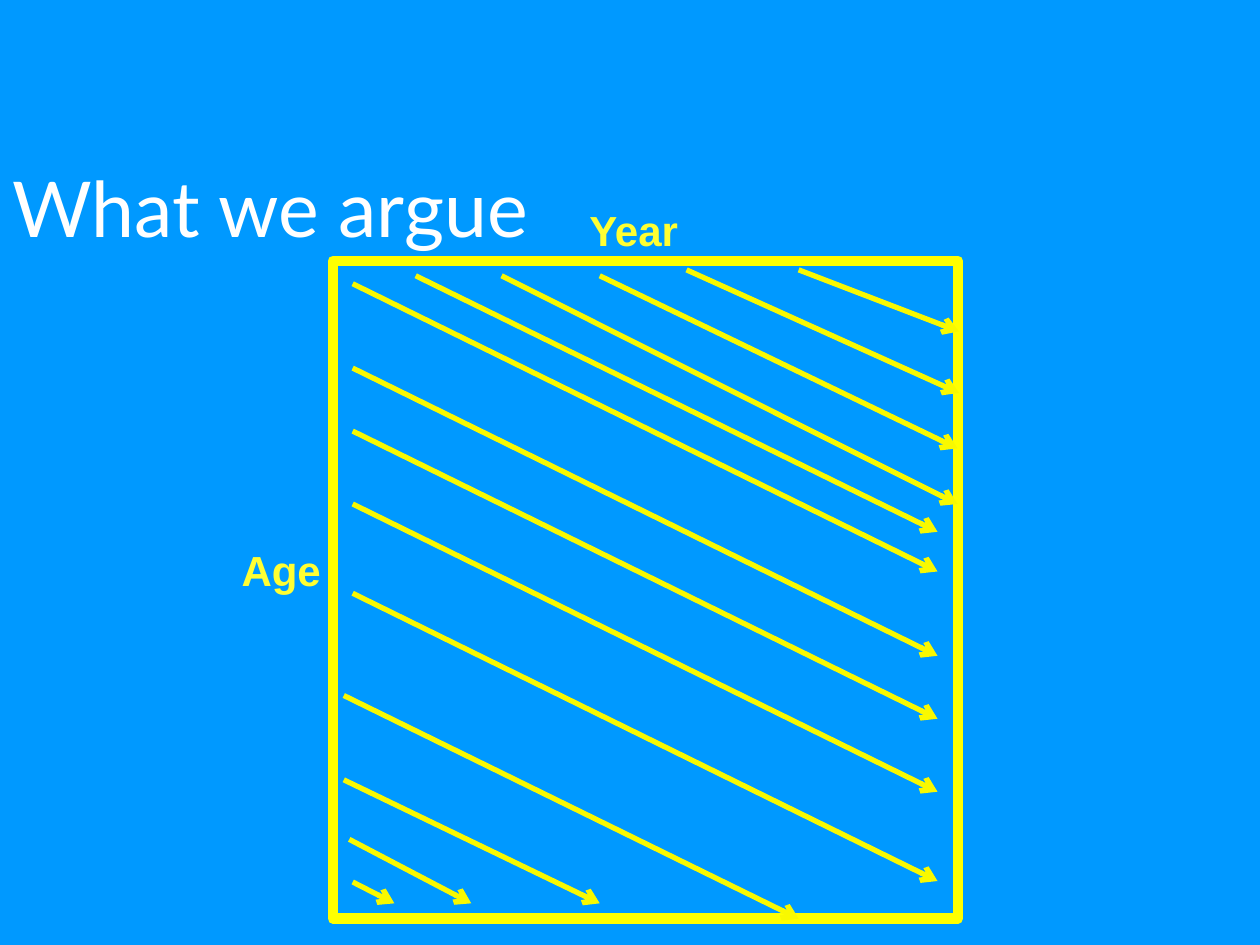
from lxml import etree
from pptx import Presentation
from pptx.dml.color import RGBColor
from pptx.enum.shapes import MSO_CONNECTOR, MSO_SHAPE
from pptx.enum.text import MSO_AUTO_SIZE
from pptx.oxml.ns import qn
from pptx.util import Cm, Pt

RECTANGLE = MSO_SHAPE.RECTANGLE
STRAIGHT = MSO_CONNECTOR.STRAIGHT
GROW = MSO_AUTO_SIZE.SHAPE_TO_FIT_TEXT

# Content: all lengths in centimetres
BACKGROUND, FRAME_COLOR, ARROW_COLOR = "0099FF", "FFFF00", "F9F900"
FRAME = (6.71, 5.26, 12.6, 13.26)
TITLE = ("What we argue", (0, 3.12, 25.4, 2.13))
AXIS_LABELS = [
    ("Age", (4.62, 10.85, 2.13, 1.27)),
    ("Year", (11.63, 3.99, 2.36, 1.27)),
]

# Full-width cohorts share their ends and their drop; only the start height varies
COHORT_LEFT, COHORT_RIGHT, COHORT_DROP = 7.11, 18.9, 5.8
COHORT_TOPS = [5.72, 7.42, 8.69, 10.16, 11.96]

# Cohorts that enter at the top or leave at the bottom: x1, y1, x2, y2
TOP_COHORTS = [
    (8.38, 5.56, 18.9, 10.72),
    (10.11, 5.56, 19.3, 10.16),
    (12.09, 5.56, 19.3, 9.04),
    (13.84, 5.44, 19.33, 7.92),
    (16.1, 5.44, 19.33, 6.68),
]
BOTTOM_COHORTS = [
    (6.93, 14.02, 16.1, 18.52),
    (6.93, 15.72, 12.09, 18.21),
    (7.04, 16.92, 9.5, 18.21),
    (7.11, 17.78, 7.95, 18.21),
]


def color(value):
    return RGBColor.from_string(value)


def lengths(values):
    return [Cm(value) for value in values]


def add_text(page, text, place, *, font, size, fill, bold=False, wrap=False):
    box = page.shapes.add_textbox(*lengths(place))
    frame = box.text_frame
    frame.word_wrap = wrap
    frame.auto_size = GROW
    span = frame.paragraphs[0].add_run()
    span.text = text
    span.font.name = font
    span.font.size = Pt(size)
    span.font.bold = bold
    span.font.color.rgb = color(fill)


def add_arrow(page, ends):
    arrow = page.shapes.add_connector(STRAIGHT, *lengths(ends))
    arrow.line.color.rgb = color(ARROW_COLOR)
    arrow.line.width = Pt(3)
    etree.SubElement(arrow.line._get_or_add_ln(), qn("a:tailEnd"), type="arrow")
    etree.SubElement(arrow._element.spPr, qn("a:effectLst"))


def main():
    deck = Presentation()
    deck.slide_width, deck.slide_height = Cm(25.4), Cm(19.05)
    page = deck.slides.add_slide(deck.slide_layouts[6])
    page.background.fill.solid()
    page.background.fill.fore_color.rgb = color(BACKGROUND)

    # Title
    add_text(page, *TITLE, font="Lato", size=44, fill="FFFFFF", wrap=True)

    # Frame of the age-by-year diagram
    square = page.shapes.add_shape(RECTANGLE, *lengths(FRAME))
    square.shadow.inherit = False
    square.fill.background()
    square.line.color.rgb = color(FRAME_COLOR)
    square.line.width = Pt(6)

    # Cohort arrows
    full_cohorts = [
        (COHORT_LEFT, top, COHORT_RIGHT, top + COHORT_DROP) for top in COHORT_TOPS
    ]
    for ends in full_cohorts + TOP_COHORTS + BOTTOM_COHORTS:
        add_arrow(page, ends)

    # Axis labels
    for text, place in AXIS_LABELS:
        add_text(page, text, place, font="Arial", size=24, fill="FFFF33", bold=True)

    deck.save("out.pptx")


if __name__ == "__main__":
    main()
